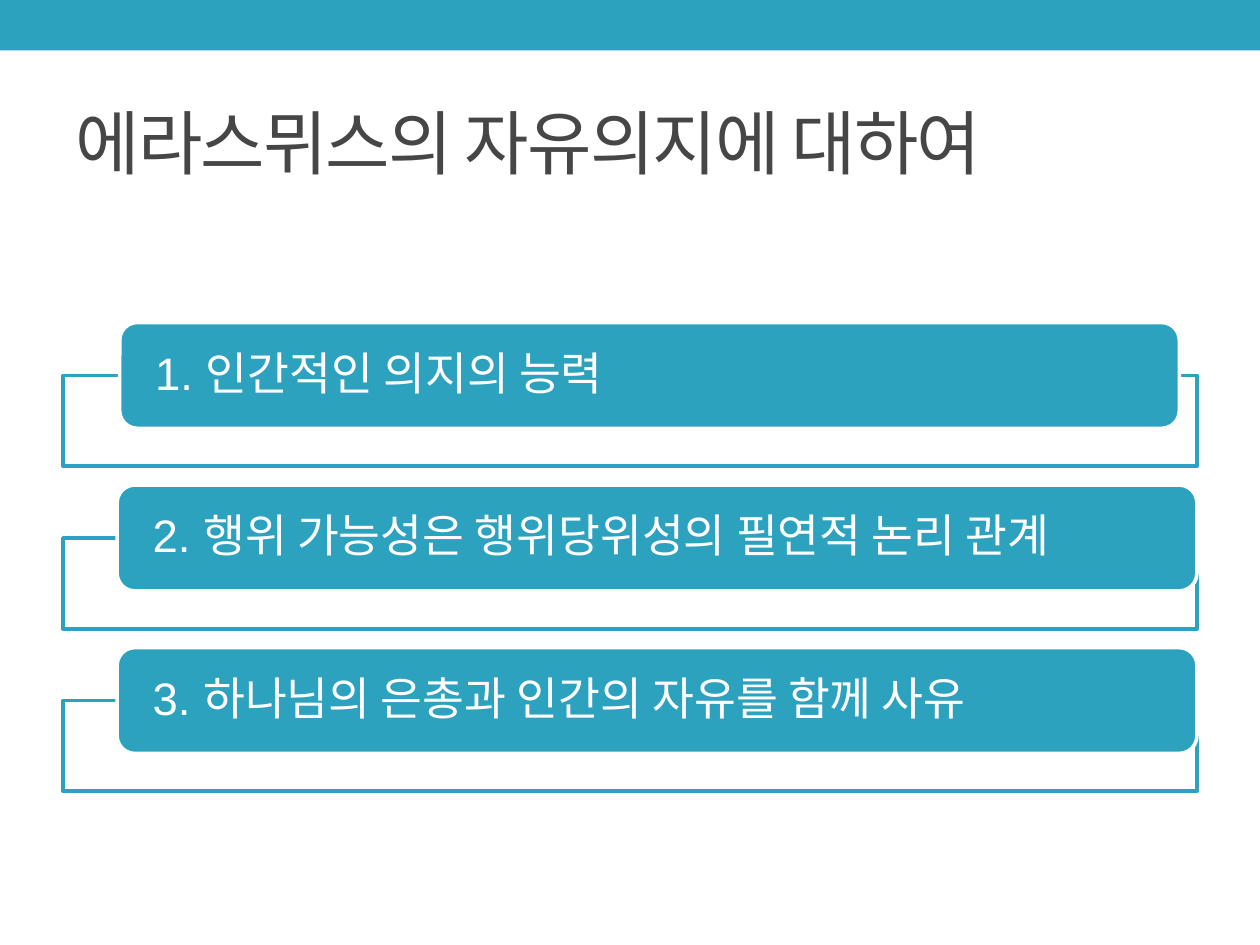
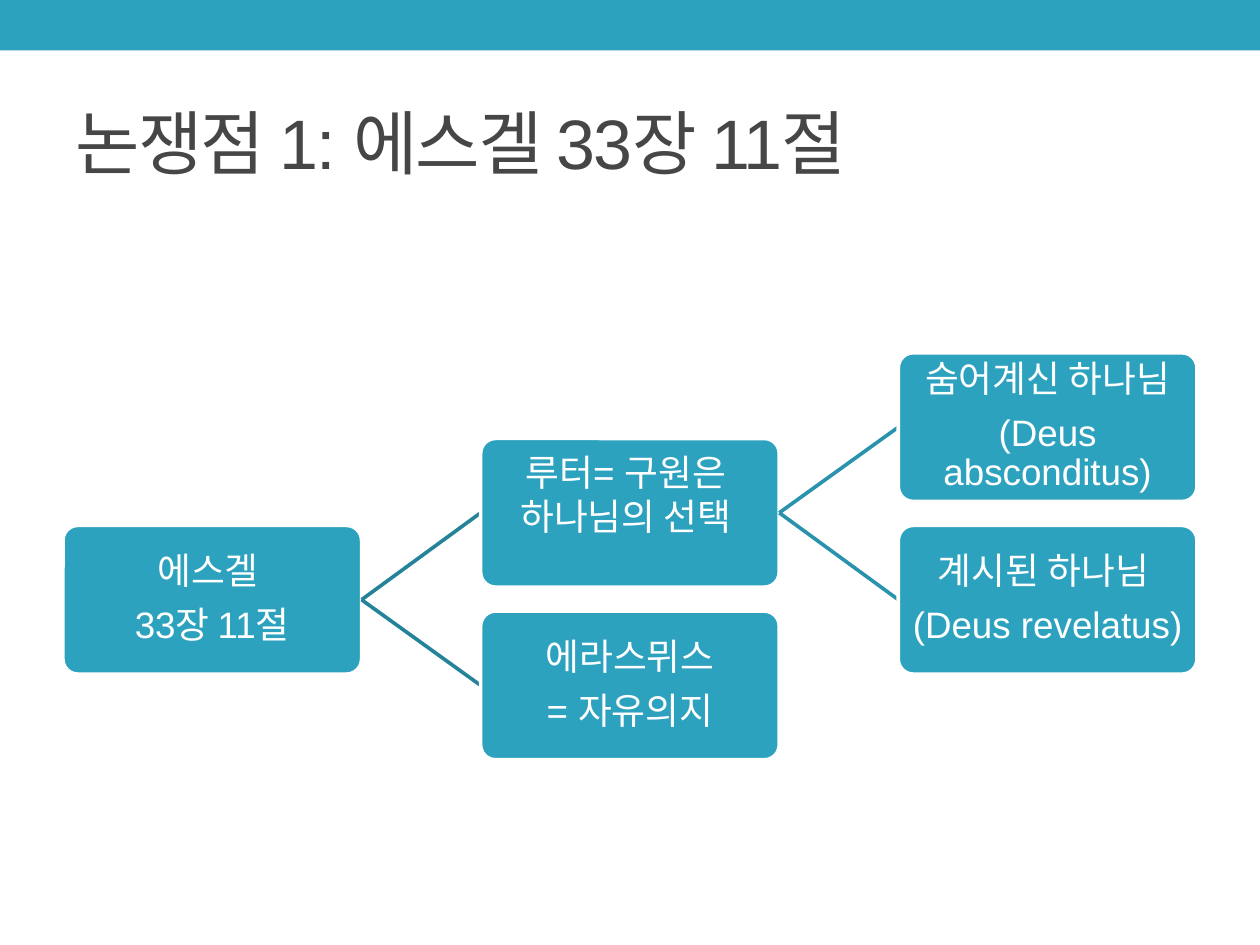
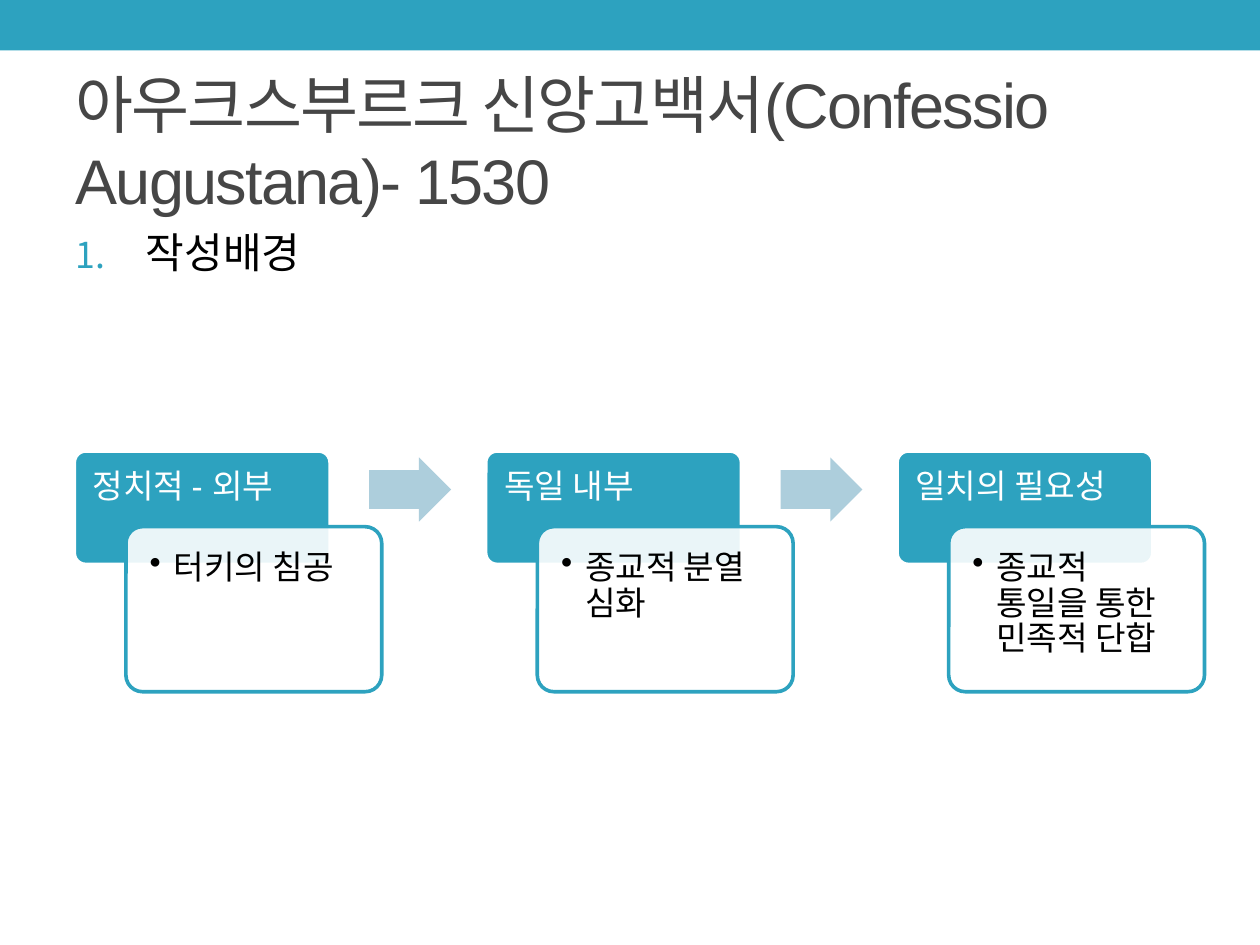
from lxml.etree import SubElement
from pptx import Presentation
from pptx.dml.color import RGBColor
from pptx.enum.shapes import MSO_CONNECTOR, MSO_SHAPE
from pptx.enum.text import MSO_ANCHOR, MSO_AUTO_SIZE, PP_ALIGN
from pptx.oxml.ns import qn
from pptx.util import Inches, Pt

TEAL = RGBColor(0x2D, 0xA2, 0xBF)
DARK_TEAL = RGBColor(0x24, 0x82, 0x99)
MID_TEAL = RGBColor(0x29, 0x93, 0xAD)
PALE_TEAL = RGBColor(0xAD, 0xCE, 0xDC)
GRAY = RGBColor(0x46, 0x46, 0x46)
BLACK = RGBColor(0, 0, 0)
WHITE = RGBColor(0xFF, 0xFF, 0xFF)
FONT = "Arial"
LINE = Pt(2.08)


def set_text(tf, text, size=20, color=WHITE, align=PP_ALIGN.LEFT, anchor=MSO_ANCHOR.MIDDLE,
             insets=(0.1, 0.05, 0.1, 0.05), line=None, after=0, before=0, spacing=None):
    """Fill a text frame, one paragraph for each line of text."""
    tf.word_wrap = True
    tf.auto_size = MSO_AUTO_SIZE.NONE
    tf.vertical_anchor = anchor
    tf.margin_left, tf.margin_top, tf.margin_right, tf.margin_bottom = map(Inches, insets)
    for i, row in enumerate(text.split("\n")):
        p = tf.add_paragraph() if i else tf.paragraphs[0]
        p.alignment, p.line_spacing = align, line
        p.space_before, p.space_after = Pt(before), Pt(after)
        r = p.add_run()
        r.text = row
        r.font.name, r.font.size, r.font.color.rgb = FONT, Pt(size), color
        if spacing:
            r.font._element.set("spc", str(spacing * 100))


def set_bullet(p, indent, tag, **attrs):
    """Give a paragraph a hanging bullet or number."""
    pPr = p._p.get_or_add_pPr()
    pPr.set("marL", str(Inches(indent)))
    pPr.set("indent", str(-Inches(indent)))
    if tag == "a:buAutoNum":
        color = SubElement(pPr, qn("a:buClr"))
        SubElement(color, qn("a:srgbClr"), val=str(TEAL))
        SubElement(pPr, qn("a:buSzPct"), val="85000")
    SubElement(pPr, qn(tag), **attrs)


def add_box(s, kind, x, y, w, h, fill=TEAL, outline=None, adj=(), alpha=None):
    sp = s.shapes.add_shape(kind, Inches(x), Inches(y), Inches(w), Inches(h))
    sp.shadow.inherit = False
    sp.fill.solid()
    sp.fill.fore_color.rgb = fill
    if alpha:
        color = sp._element.spPr.find(qn("a:solidFill"))[0]
        SubElement(color, qn("a:alpha"), val=str(alpha * 1000))
    if outline is None:
        sp.line.fill.background()
    else:
        sp.line.color.rgb, sp.line.width = outline, LINE
    for i, value in enumerate(adj):
        sp.adjustments[i] = value
    return sp


def add_slide(prs, title, size=40):
    s = prs.slides.add_slide(prs.slide_layouts[5])
    sp = s.shapes.title
    sp.left, sp.top, sp.width, sp.height = map(Inches, (0.5, 0.58, 9, 1.08))
    set_text(sp.text_frame, title, size=size, color=GRAY, spacing=-1)
    return s


def move_to_layout(sp, layout):
    """Share a shape with every slide of the layout, behind its placeholders."""
    layout.shapes._spTree.insert(2, sp._element)


def add_point(s, y, text, x=0.93, w=8.57):
    """A pill on the top edge of a wide frame."""
    add_box(s, MSO_SHAPE.RECTANGLE, 0.5, y + 0.42, 9, 0.72, WHITE, TEAL, alpha=90)
    sp = add_box(s, MSO_SHAPE.ROUNDED_RECTANGLE, x, y, w, 0.84, outline=WHITE)
    set_text(sp.text_frame, text, size=26, line=0.9, insets=(0.24, 0, 0.24, 0))


def add_node(s, column, y, text, line=0.9, after=8, bottom=0.01):
    sp = add_box(s, MSO_SHAPE.ROUNDED_RECTANGLE, 0.5 + 3.315 * column, y, 2.37, 1.18,
                 outline=WHITE, adj=[0.1])
    set_text(sp.text_frame, text, size=21, align=PP_ALIGN.CENTER, line=line, after=after,
             insets=(0.01, 0.01, 0.01, bottom))
    return sp


def add_branch(s, parent, child, color):
    """Join two nodes, with the child in front of the line."""
    c = s.shapes.add_connector(MSO_CONNECTOR.STRAIGHT, 0, 0, 0, 0)
    c.begin_connect(parent, 3)
    c.end_connect(child, 1)
    c.line.color.rgb, c.line.width = color, LINE
    SubElement(c._element.spPr, qn("a:effectLst"))
    s.shapes._spTree.append(child._element)


def add_step(s, x, heading, detail):
    """A heading with a detail card over its lower corner."""
    y = 3.58
    sp = add_box(s, MSO_SHAPE.ROUNDED_RECTANGLE, x, y, 2.03, 0.9, outline=WHITE, adj=[0.1])
    set_text(sp.text_frame, heading, size=19, anchor=MSO_ANCHOR.TOP, line=0.9,
             insets=(0.12, 0.12, 0.12, 0.05))
    sp = add_box(s, MSO_SHAPE.ROUNDED_RECTANGLE, x + 0.41, y + 0.6, 2.03, 1.31, WHITE, TEAL,
                 adj=[0.1], alpha=90)
    set_text(sp.text_frame, detail, size=19, color=BLACK, anchor=MSO_ANCHOR.TOP, line=0.9,
             insets=(0.15,) * 4)
    set_bullet(sp.text_frame.paragraphs[0], 0.19, "a:buChar", char="•")


def build_free_will(prs):
    s = add_slide(prs, "에라스뮈스의 자유의지에 대하여")
    band = add_box(s, MSO_SHAPE.RECTANGLE, 0, 0, 10, 0.4)
    move_to_layout(band, s.slide_layout)
    top, pitch = 2.56, 1.29
    add_point(s, top, "1. 인간적인 의지의 능력", x=0.95, w=8.41)
    add_point(s, top + pitch, "2. 행위 가능성은 행위당위성의 필연적 논리 관계")
    add_point(s, top + 2 * pitch, "3. 하나님의 은총과 인간의 자유를 함께 사유")


def build_dispute(prs):
    s = add_slide(prs, "논쟁점 1: 에스겔 33장 11절")
    verse = add_node(s, 0, 4.17, "에스겔 \n33장 11절")
    luther = add_node(s, 1, 3.48, "루터= 구원은 \n하나님의 선택 ", line=1, after=0, bottom=0.31)
    erasmus = add_node(s, 1, 4.85, "에라스뮈스\n= 자유의지")
    hidden = add_node(s, 2, 2.8, "숨어계신 하나님\n(Deus absconditus)")
    revealed = add_node(s, 2, 4.17, "계시된 하나님 \n(Deus revelatus)")
    for child in (luther, erasmus):
        add_branch(s, verse, child, DARK_TEAL)
    for child in (hidden, revealed):
        add_branch(s, luther, child, MID_TEAL)


def build_confession(prs):
    s = add_slide(prs, "아우크스부르크 신앙고백서(Confessio Augustana)- 1530", size=36)
    # Numbered heading
    sp = s.shapes.add_textbox(Inches(0.5), Inches(1.75), Inches(9), Inches(0.6))
    set_text(sp.text_frame, "작성배경", size=24, color=BLACK, anchor=MSO_ANCHOR.TOP, before=5)
    set_bullet(sp.text_frame.paragraphs[0], 0.56, "a:buAutoNum", type="arabicPeriod")
    # Steps with arrows between them
    steps = [("정치적 - 외부", "터키의 침공"),
             ("독일 내부", "종교적 분열 심화"),
             ("일치의 필요성", "종교적 통일을 통한 민족적 단합")]
    for i, (heading, detail) in enumerate(steps):
        x = 0.59 + 3.265 * i
        add_step(s, x, heading, detail)
        if i < len(steps) - 1:
            add_box(s, MSO_SHAPE.RIGHT_ARROW, x + 2.34, 3.63, 0.65, 0.51, PALE_TEAL,
                    adj=(0.6, 0.5))


def main():
    prs = Presentation()
    prs.slide_width, prs.slide_height = Inches(10), Inches(7.5)
    build_free_will(prs)
    build_dispute(prs)
    build_confession(prs)
    prs.save("out.pptx")


if __name__ == "__main__":
    main()
